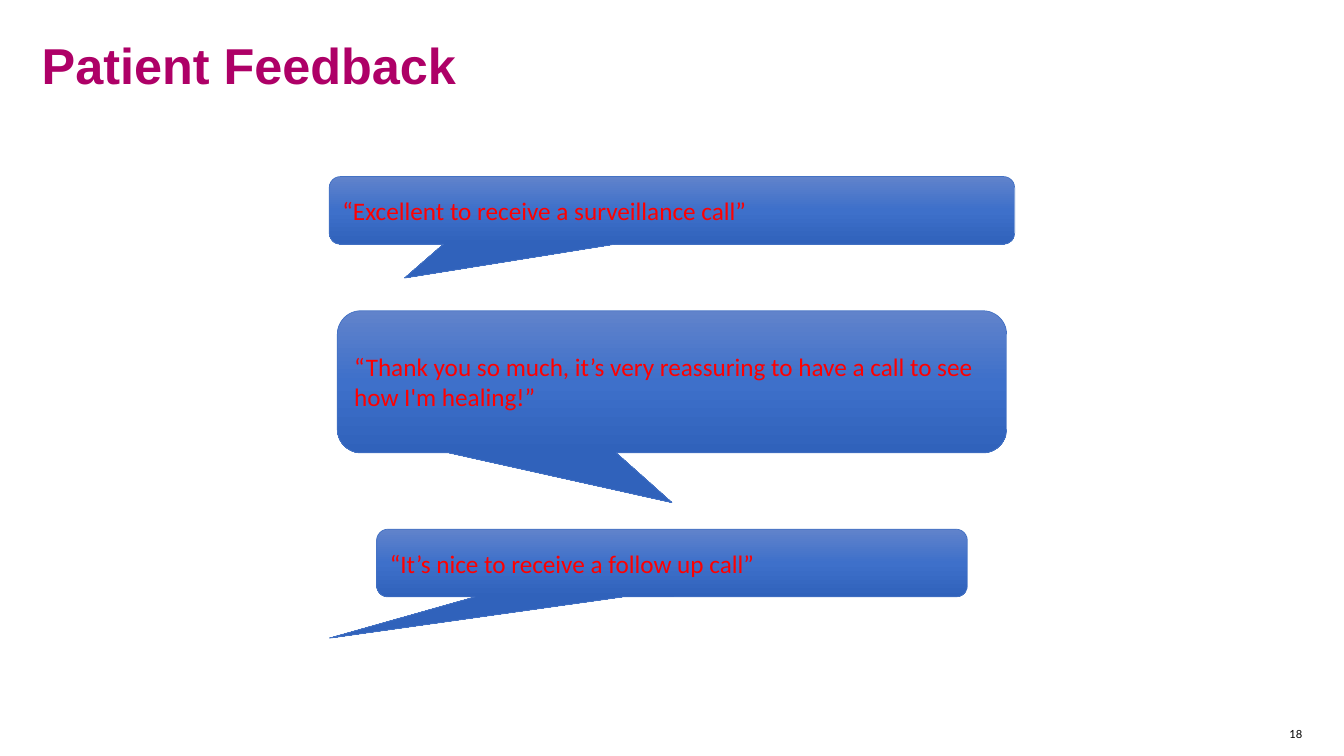
from copy import deepcopy
from dataclasses import dataclass

from pptx import Presentation
from pptx.dml.color import RGBColor
from pptx.enum.shapes import MSO_SHAPE
from pptx.enum.text import MSO_ANCHOR, MSO_AUTO_SIZE, PP_ALIGN
from pptx.oxml.ns import qn
from pptx.slide import Slide
from pptx.text.text import TextFrame, _Paragraph
from pptx.util import Inches, Pt

WIDTH, HEIGHT = Inches(13.33), Inches(7.5)
COL, ROW = WIDTH / 100, HEIGHT / 100
MAGENTA = RGBColor(0xAE, 0x00, 0x67)
RED = RGBColor(0xFF, 0x00, 0x00)
BLACK = RGBColor(0x00, 0x00, 0x00)
OUTLINE = RGBColor(0x44, 0x72, 0xC4)
BLUES = (
    RGBColor(0x61, 0x83, 0xCB),
    RGBColor(0x3E, 0x70, 0xCA),
    RGBColor(0x30, 0x62, 0xBB),
)


@dataclass(frozen=True)
class Quote:
    """A centred callout: top, width and height in grid units, tip as shares of its size."""
    text: str
    top: float
    width: float
    height: float
    tip_x: float
    tip_y: float


QUOTES = (
    Quote("“It’s nice to receive a follow up call”", 70, 43.95, 8.95, -0.58, 1.11),
    Quote("“Thank you so much, it’s very reassuring to have a call to see how I'm healing!”",
          41.1, 49.8, 18.8, 0, 0.85),
    Quote("“Excellent to receive a surveillance call”", 23.35, 51, 8.95, -0.39, 1),
)


def grid(left: float, top: float, width: float, height: float) -> tuple[int, ...]:
    return tuple(round(v) for v in (left * COL, top * ROW, width * COL, height * ROW))


def add_run(p: _Paragraph, text: str, font: str, size: float, color: RGBColor,
            bold: bool = False) -> None:
    r = p.add_run()
    r.text = text
    r.font.name, r.font.size, r.font.bold = font, Pt(size), bold
    r.font.color.rgb = color


def clear_insets(tf: TextFrame) -> None:
    tf.margin_left = tf.margin_top = tf.margin_right = tf.margin_bottom = 0
    tf.vertical_anchor = MSO_ANCHOR.TOP


def set_title(s: Slide, text: str) -> None:
    title = s.shapes.title
    title.left, title.top, title.width, title.height = grid(3.1, 5.45, 87.15, 12)
    tf = title.text_frame
    clear_insets(tf)
    tf.auto_size = MSO_AUTO_SIZE.NONE
    p = tf.paragraphs[0]
    p.alignment, p.line_spacing = PP_ALIGN.LEFT, 0.9
    add_run(p, text, "Arial", 36, MAGENTA, bold=True)


def add_quote(s: Slide, quote: Quote) -> None:
    sp = s.shapes.add_shape(
        MSO_SHAPE.ROUNDED_RECTANGULAR_CALLOUT,
        *grid(50 - quote.width / 2, quote.top, quote.width, quote.height))
    sp.shadow.inherit = False
    sp.adjustments[0], sp.adjustments[1] = quote.tip_x, quote.tip_y
    sp.fill.gradient()
    sp.fill.gradient_angle = 270
    stops = sp._element.spPr.find(".//" + qn("a:gsLst"))
    stops.append(deepcopy(stops[-1]))
    for i, (stop, blue) in enumerate(zip(sp.fill.gradient_stops, BLUES)):
        stop.position, stop.color.rgb = i / 2, blue
    sp.line.color.rgb, sp.line.width = OUTLINE, Pt(0.5)
    tf = sp.text_frame
    tf.word_wrap, tf.vertical_anchor = True, MSO_ANCHOR.MIDDLE
    p = tf.paragraphs[0]
    p.alignment = PP_ALIGN.LEFT
    add_run(p, quote.text, "Calibri", 18, RED)


def add_page_number(s: Slide, number: str) -> None:
    tf = s.shapes.add_textbox(*grid(95.1, 96.15, 1.8, 1.75)).text_frame
    clear_insets(tf)
    tf.word_wrap, tf.auto_size = True, MSO_AUTO_SIZE.SHAPE_TO_FIT_TEXT
    p = tf.paragraphs[0]
    p.alignment = PP_ALIGN.RIGHT
    add_run(p, number, "Lato", 8, BLACK)


def main() -> None:
    prs = Presentation()
    prs.slide_width, prs.slide_height = WIDTH, HEIGHT
    s = prs.slides.add_slide(prs.slide_layouts.get_by_name("Title Only"))
    add_page_number(s, "18")
    set_title(s, "Patient Feedback")
    for quote in QUOTES:
        add_quote(s, quote)
    prs.save("out.pptx")


if __name__ == "__main__":
    main()
